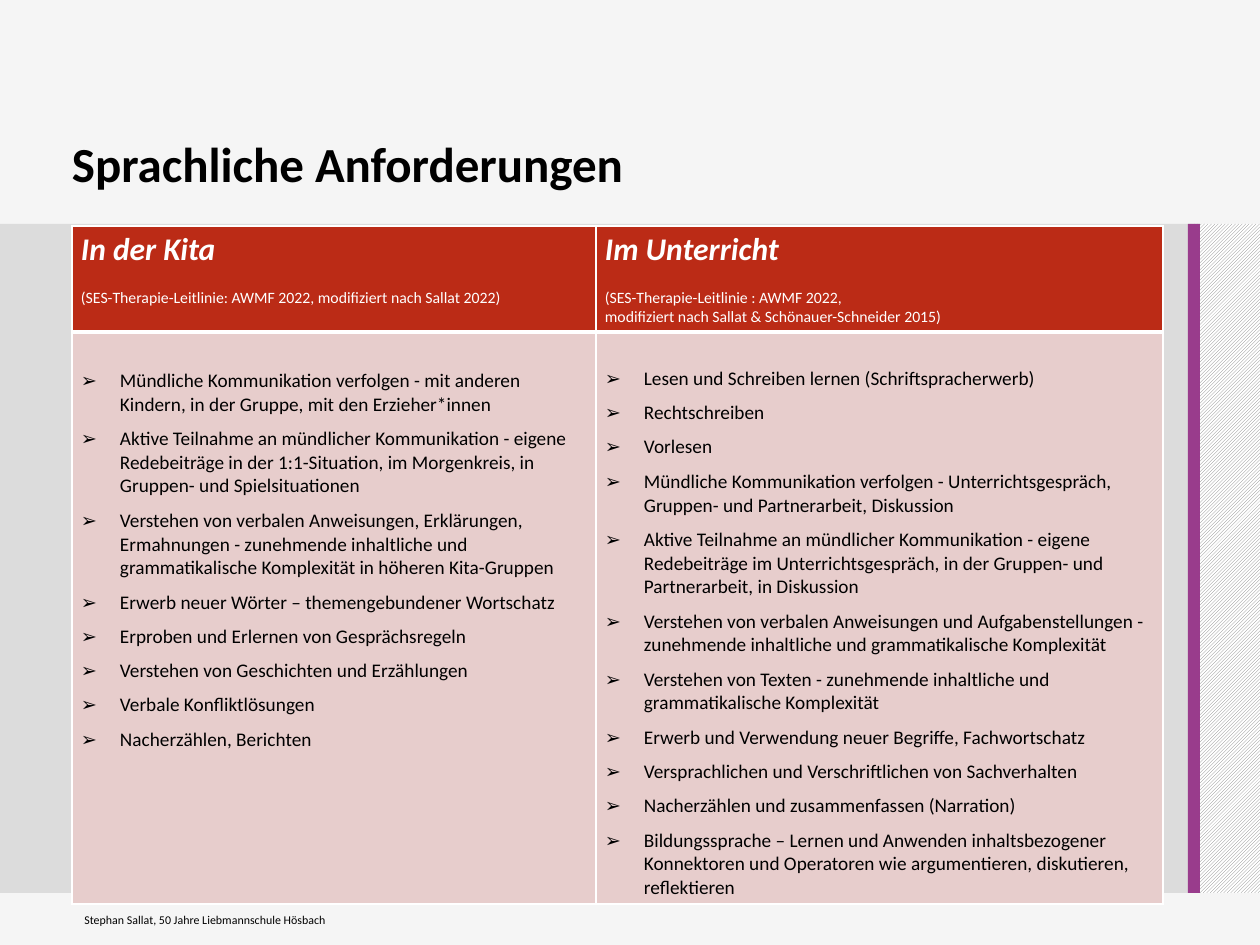
from pptx import Presentation
from pptx import util as u
from pptx.dml.color import RGBColor
from pptx.enum import dml, shapes, text
from pptx.oxml import parse_xml
from pptx.oxml.ns import nsdecls

PX = 914400 // 126
hue = RGBColor.from_string


def put(frame, words, size, color="000000", bold=False, italic=False,
        before=0, after=0, lead=None, mark=None):
    """Add one paragraph; with a mark it becomes a hanging list item."""
    para = frame.paragraphs[0]
    if para.runs:
        para = frame.add_paragraph()
    if mark:
        props = para._p.get_or_add_pPr()
        props.set("marL", str(39 * PX))
        props.set("indent", str(-39 * PX))
        props.append(parse_xml(f'<a:buFont {nsdecls("a")} typeface="Calibri"/>'))
        props.append(parse_xml(f'<a:buChar {nsdecls("a")} char="{mark}"/>'))
    para.space_before, para.space_after = u.Pt(before), u.Pt(after)
    if lead:
        para.line_spacing = lead
    for i, line in enumerate(words.split("\n")):
        if i:
            para.add_line_break()
        run = para.add_run()
        run.text = line
        font = run.font
        font.name, font.size = "Calibri", u.Pt(size)
        font.bold, font.italic = bold, italic
        font.color.rgb = hue(color)


def edge(cell, bottom):
    """Draw white borders round a cell, with the given bottom width in points."""
    props = cell._tc.get_or_add_tcPr()
    for i, (side, width) in enumerate(zip("LRTB", (1, 1, 1, bottom))):
        props.insert(i, parse_xml(
            f'<a:ln{side} {nsdecls("a")} w="{width * 12700}"><a:solidFill>'
            f'<a:srgbClr val="FFFFFF"/></a:solidFill></a:ln{side}>'))


prs = Presentation()
prs.slide_width, prs.slide_height = 1260 * PX, 945 * PX
slide = prs.slides.add_slide(prs.slide_layouts[6])
slide.background.fill.solid()
slide.background.fill.fore_color.rgb = hue("F5F5F5")

# Band behind the table: hatching, grey field, purple bar
for left, width, color in [(1188, 72, None), (0, 1200, "DCDCDC"), (1188, 12, "993C8C")]:
    band = slide.shapes.add_shape(shapes.MSO_SHAPE.RECTANGLE,
                                  left * PX, 224 * PX, width * PX, 669 * PX)
    band.shadow.inherit = False
    band.line.fill.background()
    if color:
        band.fill.solid()
        band.fill.fore_color.rgb = hue(color)
    else:
        band.fill.patterned()
        band.fill.pattern = dml.MSO_PATTERN.LIGHT_UPWARD_DIAGONAL
        band.fill.fore_color.rgb = hue("808080")
        band.fill.back_color.rgb = hue("FFFFFF")

# Title
title = slide.shapes.add_textbox(72 * PX, 50 * PX, 911 * PX, 149 * PX).text_frame
title.word_wrap = True
title.vertical_anchor = text.MSO_ANCHOR.BOTTOM
title.margin_left = title.margin_right = 0
put(title, "Sprachliche Anforderungen", 28, bold=True, lead=0.9)

# Table: width, heading, reference, top margin of the list, items
columns = [
    (524, "In der Kita",
     "(SES-Therapie-Leitlinie: AWMF 2022, modifiziert nach Sallat 2022)", 37, [
         "Mündliche Kommunikation verfolgen - mit anderen Kindern, in der Gruppe, mit den Erzieher*innen",
         "Aktive Teilnahme an mündlicher Kommunikation - eigene Redebeiträge in der 1:1-Situation, "
         "im Morgenkreis, in Gruppen- und Spielsituationen",
         "Verstehen von verbalen Anweisungen, Erklärungen, Ermahnungen - zunehmende inhaltliche "
         "und grammatikalische Komplexität in höheren Kita-Gruppen",
         "Erwerb neuer Wörter – themengebundener Wortschatz",
         "Erproben und Erlernen von Gesprächsregeln",
         "Verstehen von Geschichten und Erzählungen",
         "Verbale Konfliktlösungen",
         "Nacherzählen, Berichten"]),
    (567, "Im Unterricht",
     "(SES-Therapie-Leitlinie : AWMF 2022,\nmodifiziert nach Sallat & Schönauer-Schneider 2015)", 35, [
         "Lesen und Schreiben lernen (Schriftspracherwerb)",
         "Rechtschreiben",
         "Vorlesen",
         "Mündliche Kommunikation verfolgen - Unterrichtsgespräch, Gruppen- und Partnerarbeit, Diskussion",
         "Aktive Teilnahme an mündlicher Kommunikation - eigene Redebeiträge im Unterrichtsgespräch, "
         "in der Gruppen- und Partnerarbeit, in Diskussion",
         "Verstehen von verbalen Anweisungen und Aufgabenstellungen - zunehmende inhaltliche "
         "und grammatikalische Komplexität",
         "Verstehen von Texten - zunehmende inhaltliche und grammatikalische Komplexität",
         "Erwerb und Verwendung neuer Begriffe, Fachwortschatz",
         "Versprachlichen und Verschriftlichen von Sachverhalten",
         "Nacherzählen und zusammenfassen (Narration)",
         "Bildungssprache – Lernen und Anwenden inhaltsbezogener Konnektoren und Operatoren "
         "wie argumentieren, diskutieren, reflektieren"]),
]
table = slide.shapes.add_table(2, 2, 72 * PX, 226 * PX, 1091 * PX, 678 * PX).table
table.rows[0].height, table.rows[1].height = 106 * PX, 572 * PX
for col, (width, name, source, top, items) in enumerate(columns):
    table.columns[col].width = width * PX
    head, body = table.cell(0, col), table.cell(1, col)
    for cell, color, pad, bottom in [(head, "BB2B16", 5, 3), (body, "E7CDCC", top, 1)]:
        cell.fill.solid()
        cell.fill.fore_color.rgb = hue(color)
        cell.margin_left = cell.margin_right = 9 * PX
        cell.margin_top, cell.margin_bottom = pad * PX, 5 * PX
        edge(cell, bottom)
    put(head.text_frame, name, 18, "FFFFFF", bold=True, italic=True)
    put(head.text_frame, source, 9, "FFFFFF", before=11)
    for item in items:
        put(body.text_frame, item, 11, after=6, mark="➢")

# Footer
foot = slide.shapes.add_textbox(72 * PX, 895 * PX, 558 * PX, 50 * PX).text_frame
foot.word_wrap = True
foot.vertical_anchor = text.MSO_ANCHOR.MIDDLE
put(foot, "Stephan Sallat, 50 Jahre Liebmannschule Hösbach", 6.8)

prs.save("out.pptx")
